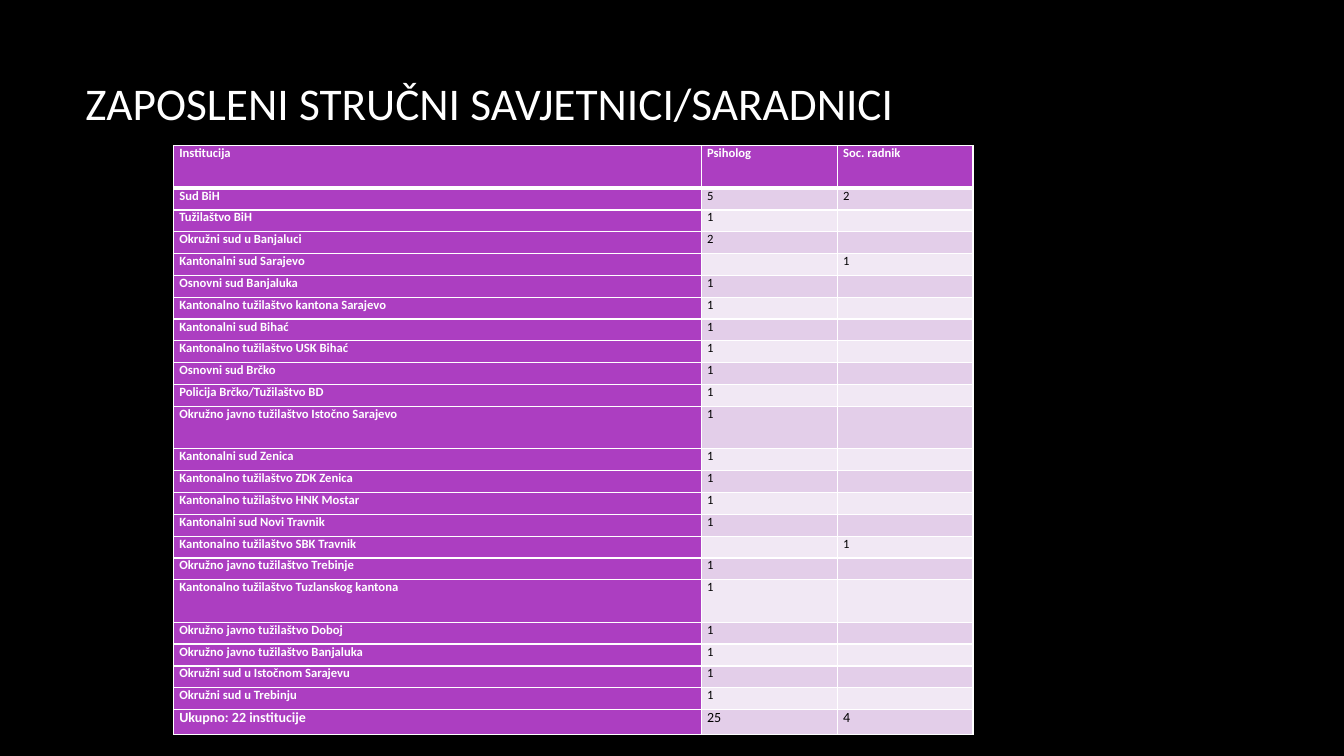
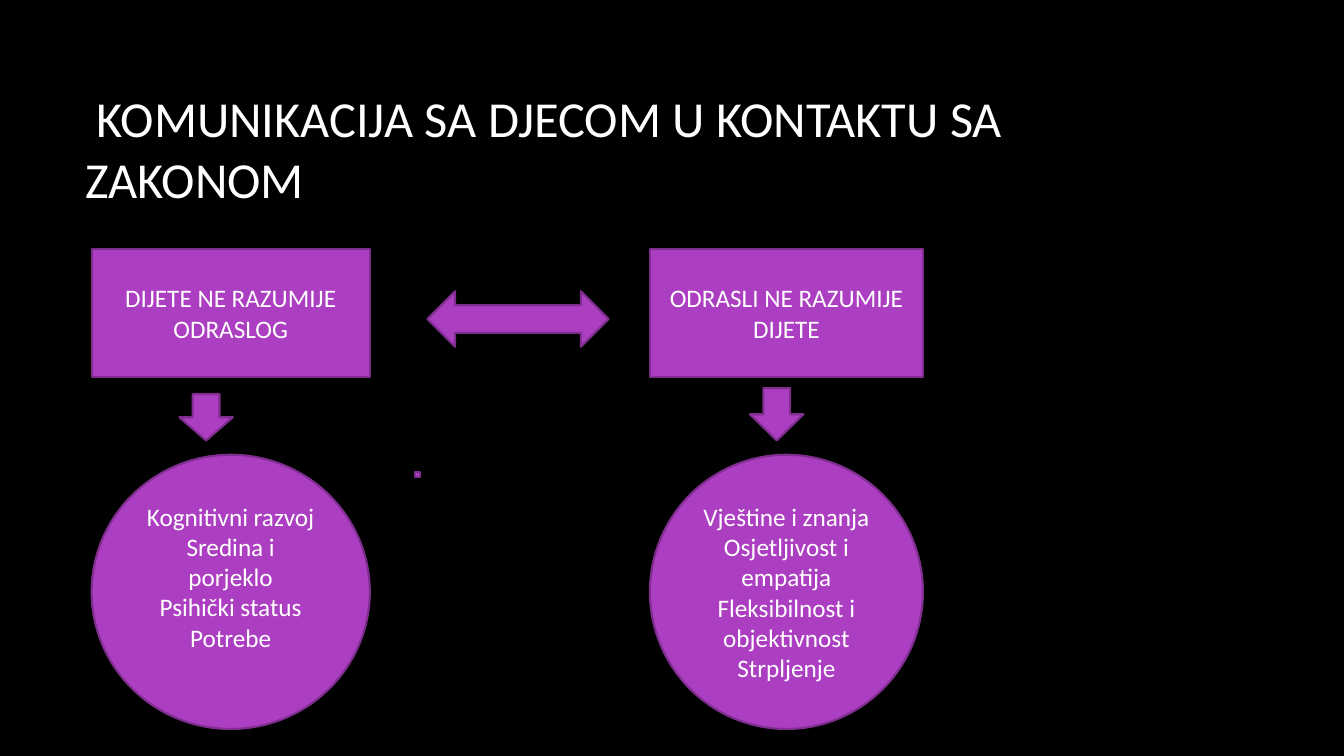
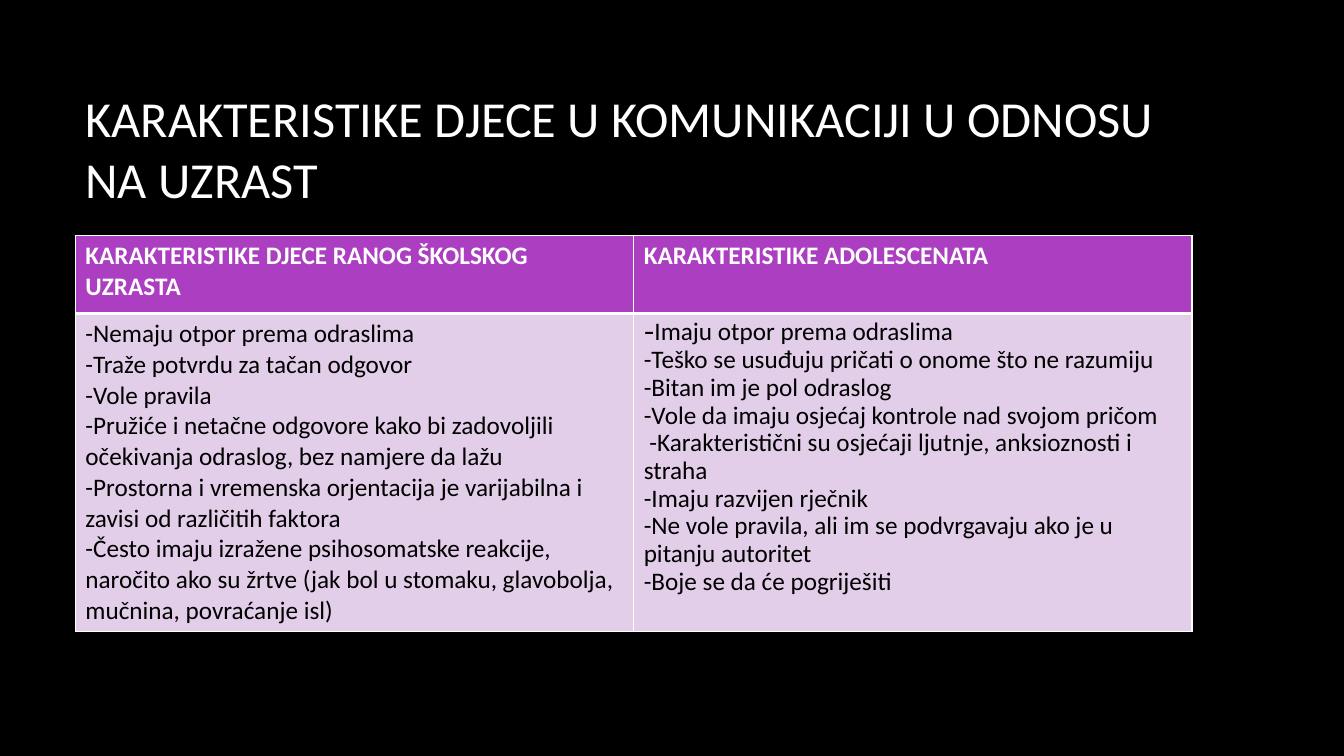
from lxml.etree import SubElement
from pptx import Presentation
from pptx.dml.color import RGBColor
from pptx.enum.shapes import MSO_SHAPE
from pptx.enum.text import MSO_ANCHOR, MSO_AUTO_SIZE, PP_ALIGN
from pptx.oxml.ns import qn
from pptx.util import Cm, Pt

COLORS = {
    "background": "000000",
    "light": "FFFFFF",
    "dark": "000000",
    "accent": "AC3EC1",
    "outline": "7F2E8F",
    "band_odd": "E3CEE9",
    "band_even": "F1E8F4",
}
FONT = "Calibri"

STAFF_HEADER = ("Institucija", "Psiholog", "Soc. radnik")
STAFF = [
    ("Sud BiH", "5", "2"),
    ("Tužilaštvo BiH", "1", ""),
    ("Okružni sud u Banjaluci", "2", ""),
    ("Kantonalni sud Sarajevo", "", "1"),
    ("Osnovni sud Banjaluka", "1", ""),
    ("Kantonalno tužilaštvo kantona Sarajevo", "1", ""),
    ("Kantonalni sud Bihać", "1", ""),
    ("Kantonalno tužilaštvo USK Bihać", "1", ""),
    ("Osnovni sud Brčko", "1", ""),
    ("Policija Brčko/Tužilaštvo BD", "1", ""),
    ("Okružno javno tužilaštvo Istočno Sarajevo", "1", ""),
    ("Kantonalni sud Zenica", "1", ""),
    ("Kantonalno tužilaštvo ZDK Zenica", "1", ""),
    ("Kantonalno tužilaštvo HNK Mostar", "1", ""),
    ("Kantonalni sud Novi Travnik", "1", ""),
    ("Kantonalno tužilaštvo SBK Travnik", "", "1"),
    ("Okružno javno tužilaštvo Trebinje", "1", ""),
    ("Kantonalno tužilaštvo Tuzlanskog kantona", "1", ""),
    ("Okružno javno tužilaštvo Doboj", "1", ""),
    ("Okružno javno tužilaštvo Banjaluka", "1", ""),
    ("Okružni sud u Istočnom Sarajevu", "1", ""),
    ("Okružni sud u Trebinju", "1", ""),
    ("Ukupno: 22 institucije", "25", "4"),
]
TALL_STAFF_ROWS = (0, 11, 18)

AGE_HEADER = (
    "KARAKTERISTIKE DJECE RANOG ŠKOLSKOG UZRASTA",
    "KARAKTERISTIKE ADOLESCENATA",
)
YOUNG_CHILDREN = [
    "-Nemaju otpor prema odraslima",
    "-Traže potvrdu za tačan odgovor",
    "-Vole pravila",
    "-Pružiće i netačne odgovore kako bi zadovoljili očekivanja odraslog, bez namjere da lažu",
    "-Prostorna i vremenska orjentacija je varijabilna i zavisi od različitih faktora",
    "-Često imaju izražene psihosomatske reakcije, naročito ako su žrtve "
    "(jak bol u stomaku, glavobolja, mučnina, povraćanje isl)",
]
ADOLESCENTS = [
    (("-", "Cabin"), ("Imaju otpor prema odraslima", FONT)),
    "-Teško se usuđuju pričati o onome što ne razumiju",
    "-Bitan im je pol odraslog",
    "-Vole da imaju osjećaj kontrole nad svojom pričom",
    " -Karakteristični su osjećaji ljutnje, anksioznosti i straha",
    "-Imaju razvijen rječnik",
    "-Ne vole pravila, ali im se podvrgavaju ako je u pitanju autoritet",
    "-Boje se da će pogriješiti",
]


def color(name):
    return RGBColor.from_string(COLORS[name])


def write(frame, paragraphs, size=18, ink="light", bold=False,
          align=PP_ALIGN.LEFT, spacing=None):
    """Fill a frame; a paragraph is a string or a tuple of (text, font) runs."""
    if isinstance(paragraphs, str):
        paragraphs = [paragraphs]
    frame.word_wrap = True
    for index, content in enumerate(paragraphs):
        paragraph = frame.add_paragraph() if index else frame.paragraphs[0]
        paragraph.alignment = align
        if spacing:
            paragraph.line_spacing = spacing
        if not content:
            SubElement(paragraph._p, qn("a:endParaRPr"), sz=str(size * 100))
            continue
        runs = ((content, FONT),) if isinstance(content, str) else content
        for text, font_name in runs:
            run = paragraph.add_run()
            run.text = text
            run.font.name = font_name
            run.font.size = Pt(size)
            run.font.bold = bold
            run.font.color.rgb = color(ink)


def add_titled_slide(presentation, title, height=4.04, size=36):
    slide = presentation.slides.add_slide(presentation.slide_layouts[5])
    shape = slide.shapes.title
    shape.left, shape.top, shape.width, shape.height = map(Cm, (1.9, 1.7, 28.14, height))
    frame = shape.text_frame
    write(frame, title, size=size)
    frame.auto_size = MSO_AUTO_SIZE.NONE
    frame.vertical_anchor = MSO_ANCHOR.MIDDLE
    return slide


def set_borders(cell, top=1, bottom=1):
    properties = cell._tc.get_or_add_tcPr()
    widths = {"L": 1, "R": 1, "T": top, "B": bottom}
    for position, (side, width) in enumerate(widths.items()):
        line = properties.makeelement(qn(f"a:ln{side}"), {"w": str(Pt(width))})
        fill = SubElement(line, qn("a:solidFill"))
        SubElement(fill, qn("a:srgbClr"), val=COLORS["light"])
        properties.insert(position, line)


def add_grid(slide, box, column_widths, row_heights):
    """Add a table with a heavy rule under its header and banded body rows."""
    frame = slide.shapes.add_table(len(row_heights), len(column_widths), *map(Cm, box))
    table = frame.table
    table.first_row = table.horz_banding = False
    for column, width in zip(table.columns, column_widths):
        column.width = Cm(width)
    for index, (row, height) in enumerate(zip(table.rows, row_heights)):
        row.height = Cm(height)
        fill = "accent" if index == 0 else "band_odd" if index % 2 else "band_even"
        for cell in row.cells:
            cell.fill.solid()
            cell.fill.fore_color.rgb = color(fill)
            set_borders(cell, top=3 if index == 1 else 1, bottom=3 if index == 0 else 1)
    return table


def add_staff_table(slide, box):
    rows = [STAFF_HEADER, *STAFF]
    heights = [1.07 if index in TALL_STAFF_ROWS else 0.55 for index in range(len(rows))]
    heights[-1] = 0.63
    table = add_grid(slide, box, (13.3, 3.43, 3.42), heights)
    for row_index, values in enumerate(rows):
        size = 10 if row_index == len(rows) - 1 else 9
        for column_index, value in enumerate(values):
            cell = table.cell(row_index, column_index)
            cell.margin_left = cell.margin_right = Cm(0.15)
            cell.margin_top = cell.margin_bottom = 0
            heading = row_index == 0 or column_index == 0
            if heading:
                cell.fill.fore_color.rgb = color("accent")
            write(cell.text_frame, value, size=size, bold=heading,
                  ink="light" if heading else "dark", align=PP_ALIGN.JUSTIFY)


def add_age_table(slide, box):
    table = add_grid(slide, box, (box[2] / 2,) * 2, (1.96, 7.87))
    for column, heading in enumerate(AGE_HEADER):
        write(table.cell(0, column).text_frame, heading, bold=True)
    write(table.cell(1, 0).text_frame, YOUNG_CHILDREN, ink="dark")
    write(table.cell(1, 1).text_frame, ADOLESCENTS, ink="dark", spacing=0.9)


def add_block(slide, kind, box, paragraphs=None):
    shape = slide.shapes.add_shape(kind, *map(Cm, box))
    shape.shadow.inherit = False
    shape.fill.solid()
    shape.fill.fore_color.rgb = color("accent")
    shape.line.color.rgb = color("outline")
    shape.line.width = Pt(1.5)
    if paragraphs:
        write(shape.text_frame, paragraphs, align=PP_ALIGN.CENTER)
        shape.text_frame.vertical_anchor = MSO_ANCHOR.MIDDLE
    return shape


def add_side(slide, box, problem, factors, arrow_offset, arrow_height):
    """Stack a problem, a down arrow and a circle of factors; return the circle."""
    left, top, width, height = box
    circle_height = 6.91
    arrow_bottom = top + 4.83
    add_block(slide, MSO_SHAPE.RECTANGLE, (left, top, width, 3.23), problem)
    add_block(slide, MSO_SHAPE.DOWN_ARROW,
              (left + arrow_offset, arrow_bottom - arrow_height, 1.35, arrow_height))
    return add_block(slide, MSO_SHAPE.OVAL,
                     (left, top + height - circle_height, width, circle_height), factors)


def add_communication_diagram(slide, box):
    left, top, width, height = box
    right_width = 6.88
    child_circle = add_side(
        slide, (left, top, 7.01, height), "DIJETE NE RAZUMIJE ODRASLOG",
        ["Kognitivni razvoj", "Sredina i porjeklo", "Psihički status", "Potrebe"],
        arrow_offset=2.21, arrow_height=1.17)
    child_circle.text_frame.margin_bottom = Cm(0.9)
    add_side(
        slide, (left + width - right_width, top, right_width, height),
        "ODRASLI NE RAZUMIJE DIJETE",
        ["Vještine i znanja", "Osjetljivost i empatija",
         "Fleksibilnost i objektivnost", "Strpljenje"],
        arrow_offset=2.52, arrow_height=1.32)
    add_block(slide, MSO_SHAPE.LEFT_RIGHT_ARROW, (left + 8.46, top + 1.07, 4.57, 1.4))
    add_block(slide, MSO_SHAPE.RECTANGLE, (left + 8.15, top + 5.62, 0.13, 0.13))


def main():
    presentation = Presentation()
    presentation.slide_width, presentation.slide_height = Cm(33.87), Cm(19.05)
    background = presentation.slide_master.background.fill
    background.solid()
    background.fore_color.rgb = color("background")

    slide = add_titled_slide(presentation, "ZAPOSLENI STRUČNI SAVJETNICI/SARADNICI",
                             height=1.75, size=32.4)
    add_staff_table(slide, (4.37, 3.67, 20.15, 14.84))

    slide = add_titled_slide(presentation, " KOMUNIKACIJA SA DJECOM U KONTAKTU SA ZAKONOM")
    add_communication_diagram(slide, (2.31, 6.27, 20.95, 12.1))

    slide = add_titled_slide(presentation,
                             "KARAKTERISTIKE DJECE U KOMUNIKACIJI U ODNOSU NA UZRAST")
    add_age_table(slide, (1.9, 5.94, 28.14, 9.83))

    presentation.save("out.pptx")


if __name__ == "__main__":
    main()
